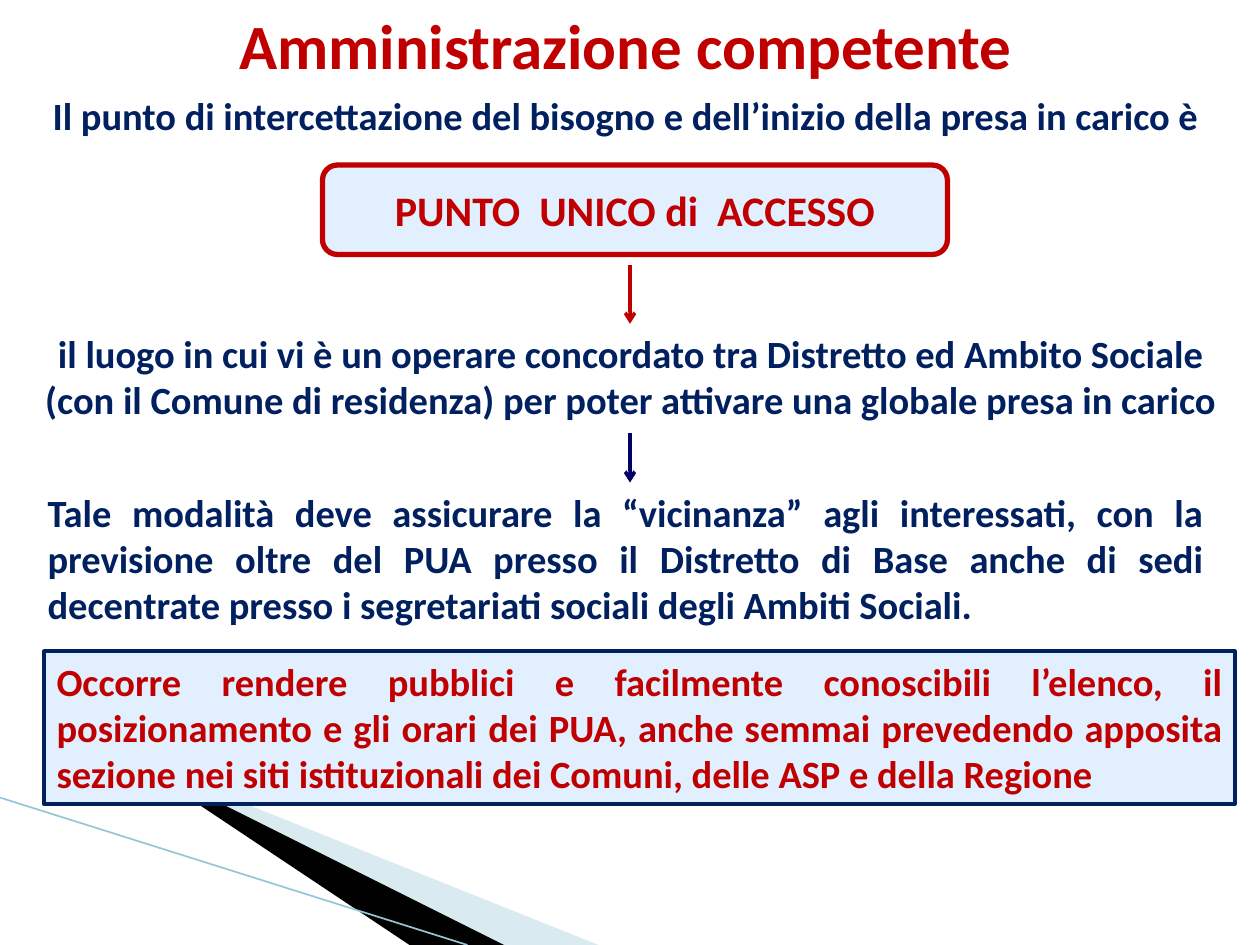
"""Build the slide on the competent administration and its single access point."""
from lxml import etree
from pptx import Presentation
from pptx import util as u
from pptx.dml.color import RGBColor
from pptx.enum import shapes, text
from pptx.oxml.ns import qn

WIDTH, HEIGHT = 10, 7.5
RED, NAVY, PALE = "C00000", "002060", "E1EFFF"
CENTER, JUSTIFY = text.PP_ALIGN.CENTER, text.PP_ALIGN.JUSTIFY
RECT, ROUNDED = shapes.MSO_SHAPE.RECTANGLE, shapes.MSO_SHAPE.ROUNDED_RECTANGLE

TITLE = ("Amministrazione competente", (0.91, 0, 8.11, 0.71), 36, RED, CENTER)
STATEMENTS = [
    ("Il punto di intercettazione del bisogno e dell’inizio della presa in carico è",
     (0.28, 0.68, 9.37, 0.47), 22, NAVY, CENTER),
    ("il luogo in cui vi è un operare concordato tra Distretto ed Ambito Sociale "
     "(con il Comune di residenza) per poter attivare una globale presa in carico",
     (0.2, 2.57, 9.61, 0.84), 22, NAVY, CENTER),
    ("Tale modalità deve assicurare la “vicinanza” agli interessati, con la previsione "
     "oltre del PUA presso il Distretto di Base anche di sedi decentrate presso i "
     "segretariati sociali degli Ambiti Sociali.",
     (0.28, 3.83, 9.37, 1.21), 22, NAVY, JUSTIFY),
]
PANELS = [
    (ROUNDED, RED, 3, text.MSO_ANCHOR.MIDDLE,
     ("PUNTO  UNICO di  ACCESSO", (2.56, 1.31, 4.96, 0.71), 24, RED, CENTER)),
    (RECT, NAVY, 2.25, text.MSO_ANCHOR.TOP,
     ("Occorre rendere pubblici e facilmente conoscibili l’elenco, il posizionamento e "
      "gli orari dei PUA, anche semmai prevedendo apposita sezione nei siti "
      "istituzionali dei Comuni, delle ASP e della Regione",
      (0.35, 5.17, 9.45, 1.21), 22, RED, JUSTIFY)),
]
ARROWS = [(2.1, 2.57, RED), (3.44, 3.83, "000066")]
WEDGES = [
    ([(0.55, 6.5), (5.95, HEIGHT), (4.56, HEIGHT)], "A0CBDC", 40),
    ([(0.53, 6.49), (4.57, HEIGHT), (3.72, HEIGHT)], "000000", 100),
]
EDGE = ((0, 6.33), (3.71, HEIGHT), "97C5D8", 0.95)


def rgb(color):
    return RGBColor.from_string(color)


def inches(values):
    return [u.Inches(value) for value in values]


def write(shape, content, anchor=text.MSO_ANCHOR.TOP):
    words, _, size, color, align = content
    frame = shape.text_frame
    layout = {"word_wrap": True, "auto_size": text.MSO_AUTO_SIZE.NONE,
              "vertical_anchor": anchor}
    for name, value in layout.items():
        setattr(frame, name, value)
    frame.text = words
    paragraph = frame.paragraphs[0]
    paragraph.alignment = align
    for name, value in {"name": "Calibri", "size": u.Pt(size), "bold": True}.items():
        setattr(paragraph.font, name, value)
    paragraph.font.color.rgb = rgb(color)


def add_wedge(slide, corners, color, opacity):
    builder = slide.shapes.build_freeform(*corners[0], scale=u.Inches(1))
    builder.add_line_segments(corners[1:], close=True)
    wedge = builder.convert_to_shape()
    wedge.shadow.inherit = False
    wedge.line.fill.background()
    wedge.fill.solid()
    wedge.fill.fore_color.rgb = rgb(color)
    if opacity < 100:
        tint = wedge.fill._xPr.find(".//" + qn("a:srgbClr"))
        etree.SubElement(tint, qn("a:alpha"), val=str(opacity * 1000))


def add_line(slide, start, end, color, weight, head=False):
    line = slide.shapes.add_connector(
        shapes.MSO_CONNECTOR.STRAIGHT, *inches(start + end))
    line.line.color.rgb = rgb(color)
    line.line.width = u.Pt(weight)
    if head:
        etree.SubElement(line.line._get_or_add_ln(), qn("a:tailEnd"), type="arrow")
    etree.SubElement(line._element.spPr, qn("a:effectLst"))


def add_panel(slide, outline, border, weight, anchor, content):
    panel = slide.shapes.add_shape(outline, *inches(content[1]))
    panel.shadow.inherit = False
    panel.fill.solid()
    panel.fill.fore_color.rgb = rgb(PALE)
    panel.line.color.rgb = rgb(border)
    panel.line.width = u.Pt(weight)
    write(panel, content, anchor)


def main():
    deck = Presentation()
    deck.slide_width, deck.slide_height = inches((WIDTH, HEIGHT))
    slide = deck.slides.add_slide(deck.slide_layouts.get_by_name("Title Only"))
    for wedge in WEDGES:
        add_wedge(slide, *wedge)
    add_line(slide, *EDGE)

    title = slide.shapes.title
    for side, value in zip(("left", "top", "width", "height"), inches(TITLE[1])):
        setattr(title, side, value)
    write(title, TITLE)

    for panel in PANELS:
        add_panel(slide, *panel)
    for statement in STATEMENTS:
        write(slide.shapes.add_textbox(*inches(statement[1])), statement)
    for top, bottom, color in ARROWS:
        add_line(slide, (WIDTH / 2, top), (WIDTH / 2, bottom), color, 2, head=True)
    deck.save("out.pptx")


if __name__ == "__main__":
    main()
